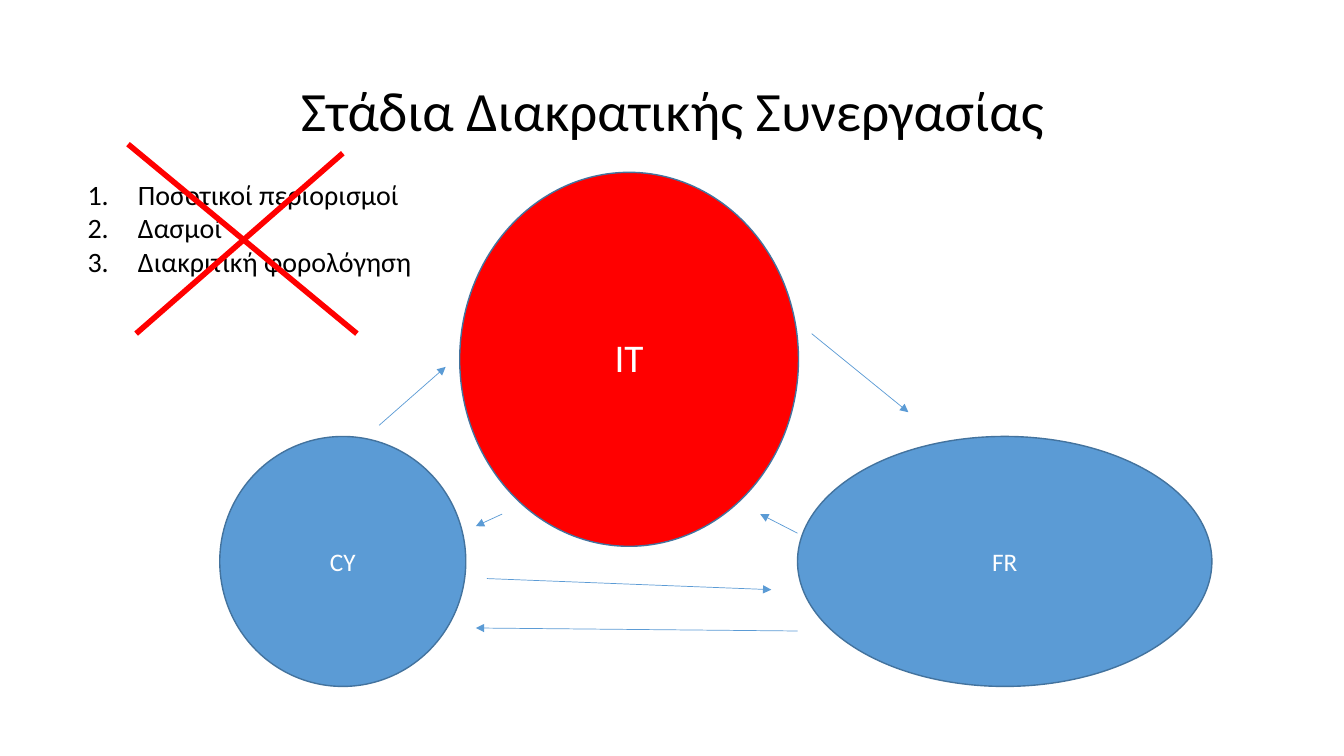
from pptx import Presentation
from pptx.dml.color import RGBColor
from pptx.enum.shapes import MSO_CONNECTOR, MSO_SHAPE
from pptx.enum.text import MSO_ANCHOR, MSO_AUTO_SIZE, PP_ALIGN
from pptx.oxml.ns import qn
from pptx.util import Inches, Pt
from lxml.etree import SubElement

BLACK = RGBColor(0x00, 0x00, 0x00)
WHITE = RGBColor(0xFF, 0xFF, 0xFF)
RED = RGBColor(0xFF, 0x00, 0x00)
BLUE = RGBColor(0x5B, 0x9B, 0xD5)
DARK_BLUE = RGBColor(0x43, 0x73, 0x9E)


def write_text(paragraph, text, *, size, color=BLACK, font="Calibri",
               align=PP_ALIGN.LEFT, line_spacing=1.0, space_before=0):
    paragraph.alignment = align
    paragraph.line_spacing = line_spacing
    paragraph.space_before = Pt(space_before)
    run = paragraph.add_run()
    run.text = text
    run.font.name = font
    run.font.size = Pt(size)
    run.font.color.rgb = color


def set_bullet(paragraph, tag, indent=0, **attributes):
    """Give the paragraph a hanging indent and a bullet element."""
    properties = paragraph._p.get_or_add_pPr()
    properties.set("marL", str(Inches(indent)))
    properties.set("indent", str(-Inches(indent)))
    SubElement(properties, qn(tag), attributes)


def place(shape, left, top, width, height):
    shape.left, shape.top = Inches(left), Inches(top)
    shape.width, shape.height = Inches(width), Inches(height)


class CooperationSlide:
    def __init__(self, presentation):
        self.slide = presentation.slides.add_slide(presentation.slide_layouts[1])
        self.shapes = self.slide.shapes

    def title(self, text, *box):
        title = self.shapes.title
        place(title, *box)
        frame = title.text_frame
        frame.auto_size = MSO_AUTO_SIZE.NONE
        frame.vertical_anchor = MSO_ANCHOR.MIDDLE
        write_text(frame.paragraphs[0], text, size=39.6,
                   align=PP_ALIGN.CENTER, line_spacing=0.9)

    def style_country(self, shape, name, fill, **text_format):
        shape.fill.solid()
        shape.fill.fore_color.rgb = fill
        shape.line.color.rgb = DARK_BLUE
        shape.line.width = Pt(1)
        frame = shape.text_frame
        frame.auto_size = MSO_AUTO_SIZE.NONE
        frame.vertical_anchor = MSO_ANCHOR.MIDDLE
        write_text(frame.paragraphs[0], name, color=WHITE,
                   align=PP_ALIGN.CENTER, **text_format)

    def country(self, name, *box):
        shape = self.shapes.add_shape(MSO_SHAPE.OVAL, *map(Inches, box))
        shape.shadow.inherit = False
        self.style_country(shape, name, BLUE, size=18)

    def main_country(self, name, *box):
        """Turn the body placeholder into the large red ellipse."""
        body = self.slide.placeholders[1]
        place(body, *box)
        geometry = SubElement(body._element.spPr, qn("a:prstGeom"), prst="ellipse")
        SubElement(geometry, qn("a:avLst"))
        self.style_country(body, name, RED, size=28, line_spacing=0.9, space_before=10)
        set_bullet(body.text_frame.paragraphs[0], "a:buNone")

    def line(self, start, end, color, width, arrow=False):
        connector = self.shapes.add_connector(
            MSO_CONNECTOR.STRAIGHT, *map(Inches, start + end))
        connector.line.color.rgb = color
        connector.line.width = Pt(width)
        if arrow:
            SubElement(connector.line._get_or_add_ln(), qn("a:tailEnd"), type="triangle")
        SubElement(connector._element.spPr, qn("a:effectLst"))

    def numbered_list(self, items, *box):
        frame = self.shapes.add_textbox(*map(Inches, box)).text_frame
        frame.word_wrap = True
        for index, item in enumerate(items):
            paragraph = frame.add_paragraph() if index else frame.paragraphs[0]
            write_text(paragraph, item, size=20)
            set_bullet(paragraph, "a:buAutoNum", indent=0.5, type="arabicPeriod")


def main():
    presentation = Presentation()
    presentation.slide_width = Inches(13.33)
    presentation.slide_height = Inches(7.5)

    slide = CooperationSlide(presentation)
    slide.title("Στάδια Διακρατικής Συνεργασίας", 0.92, 0.4, 11.5, 1.45)
    slide.main_country("IT", 4.56, 1.71, 3.36, 3.71)
    slide.country("CY", 2.18, 4.33, 2.44, 2.48)
    slide.country("FR", 7.91, 4.33, 4.11, 2.48)

    trade_flows = [
        ((3.76, 4.22), (4.42, 3.64)),
        ((8.05, 3.31), (9.01, 4.09)),
        ((7.91, 5.29), (7.54, 5.1)),
        ((4.98, 5.1), (4.72, 5.22)),
        ((4.83, 5.74), (7.65, 5.85)),
        ((7.91, 6.26), (4.72, 6.23)),
    ]
    for start, end in trade_flows:
        slide.line(start, end, BLUE, 0.5, arrow=True)

    barriers = ["Ποσοτικοί περιορισμοί", "Δασμοί", "Διακριτική φορολόγηση"]
    slide.numbered_list(barriers, 0.77, 1.71, 3.79, 1.45)
    cross_strokes = [((1.27, 1.43), (3.54, 3.31)), ((1.35, 3.31), (3.4, 1.52))]
    for start, end in cross_strokes:
        slide.line(start, end, RED, 4)

    presentation.save("out.pptx")


if __name__ == "__main__":
    main()
